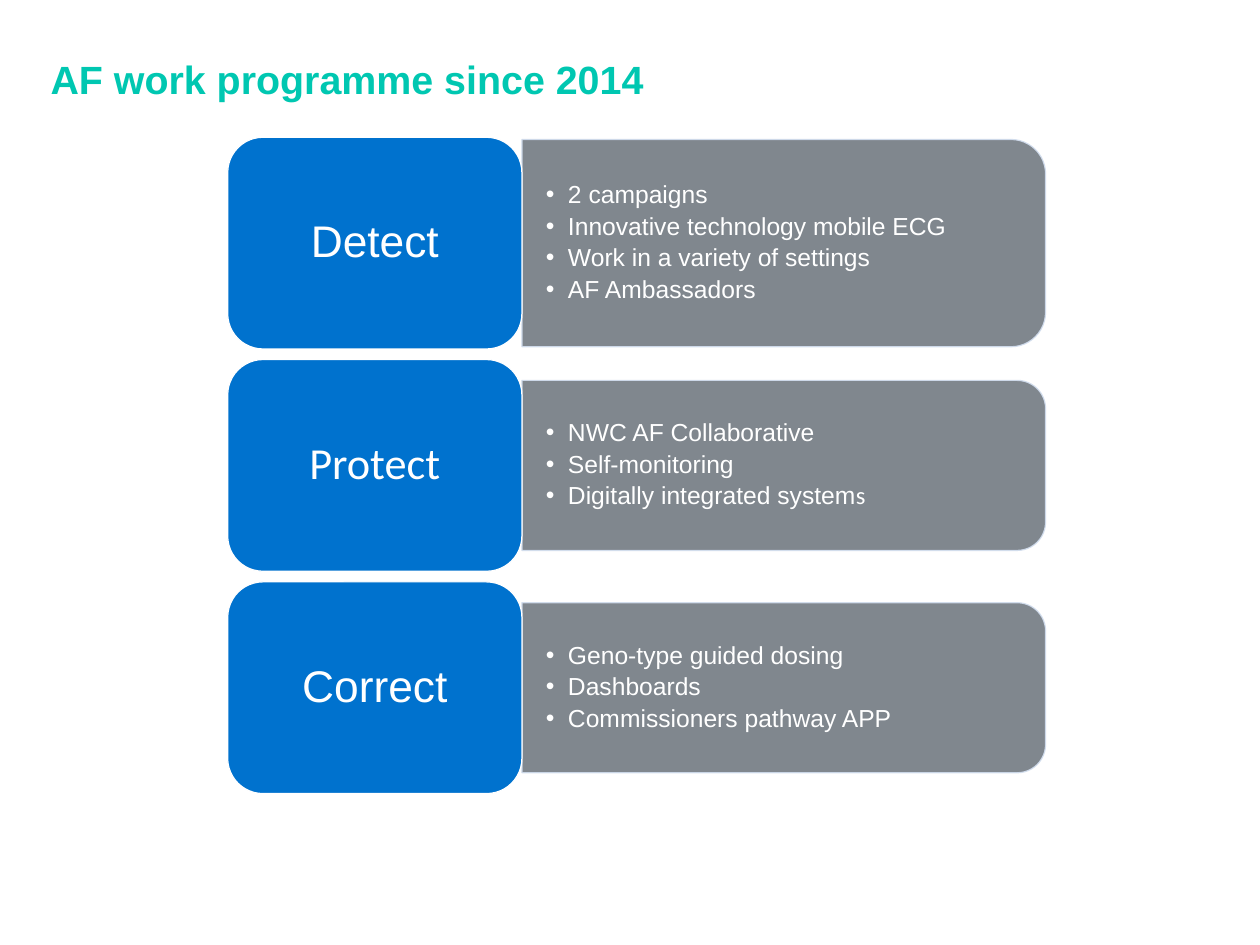
from lxml.etree import SubElement
from pptx import Presentation
from pptx.dml.color import RGBColor
from pptx.enum.shapes import MSO_SHAPE
from pptx.enum.text import MSO_ANCHOR, MSO_AUTO_SIZE, PP_ALIGN
from pptx.oxml.ns import qn
from pptx.util import Inches, Pt

TEAL, BLUE, GREY, PALE, WHITE = "00C7B1", "0072CE", "737B82", "D2DEEF", "FFFFFF"
LABEL_LEFT, LABEL_WIDTH, LABEL_HEIGHT = 2.57, 3.32, 2.39
FIRST_TOP, ROW_PITCH = 1.55, 2.51
PANEL_LEFT, PANEL_WIDTH = LABEL_LEFT + LABEL_WIDTH, 5.91

# Label, label font, panel height, bullets made of (text, font) spans
STAGES = [
    ("Detect", "Arial", 2.34, [
        [("2 campaigns", "Arial")],
        [("Innovative technology mobile ECG", "Arial")],
        [("Work in a variety of settings", "Arial")],
        [("AF Ambassadors", "Arial")],
    ]),
    ("Protect", "Calibri", 1.92, [
        [("NWC AF Collaborative", "Arial")],
        [("Self-monitoring", "Arial")],
        [("Digitally integrated system", "Arial"), ("s", "Calibri")],
    ]),
    ("Correct", "Arial", 1.92, [
        [("Geno-type guided dosing", "Arial")],
        [("Dashboards", "Arial")],
        [("Commissioners pathway APP", "Arial")],
    ]),
]


def colour(value):
    return RGBColor.from_string(value)


def style_font(font, size, value, name=None):
    font.size = Pt(size)
    font.color.rgb = colour(value)
    if name:
        font.name = name


def set_frame(frame, side, edge):
    frame.word_wrap = True
    frame.auto_size = MSO_AUTO_SIZE.NONE
    frame.vertical_anchor = MSO_ANCHOR.MIDDLE
    frame.margin_left = frame.margin_right = Inches(side)
    frame.margin_top = frame.margin_bottom = Inches(edge)


def add_block(page, kind, left, top, width, height, fill, line):
    block = page.shapes.add_shape(kind, Inches(left), Inches(top), Inches(width), Inches(height))
    block.shadow.inherit = False
    block.fill.solid()
    block.fill.fore_color.rgb = colour(fill)
    block.line.color.rgb = colour(line)
    block.line.width = Pt(1)
    return block


def add_title(page, text):
    title = page.shapes.title
    title.left, title.top = Inches(0.43), Inches(0.3)
    title.width, title.height = Inches(13.08), Inches(1.25)
    set_frame(title.text_frame, 0.14, 0.07)
    para = title.text_frame.paragraphs[0]
    para.text = text
    para.alignment = PP_ALIGN.LEFT
    para.line_spacing = 0.9
    style_font(para.font, 32, TEAL, "Arial")
    para.font.bold = True


def add_panel(page, centre, height):
    """Add a panel turned a quarter so that its rounded corners face right."""
    panel = add_block(page, MSO_SHAPE.ROUND_2_SAME_RECTANGLE,
                      PANEL_LEFT + (PANEL_WIDTH - height) / 2, centre - PANEL_WIDTH / 2,
                      height, PANEL_WIDTH, GREY, PALE)
    panel.rotation = 90
    for shade in panel.element.spPr.iter(qn("a:srgbClr")):
        SubElement(shade, qn("a:alpha"), val="90000")


def add_bullets(page, centre, height, bullets):
    box = page.shapes.add_textbox(Inches(PANEL_LEFT), Inches(centre - height / 2),
                                  Inches(PANEL_WIDTH), Inches(height))
    frame = box.text_frame
    set_frame(frame, 0.27, 0.14)
    for index, spans in enumerate(bullets):
        para = frame.paragraphs[0] if index == 0 else frame.add_paragraph()
        properties = para._p.get_or_add_pPr()
        properties.set("marL", str(Inches(0.25)))
        properties.set("indent", str(Inches(-0.25)))
        SubElement(properties, qn("a:buFont"), typeface="Arial")
        SubElement(properties, qn("a:buChar"), char="•")
        para.line_spacing = 0.9
        para.space_after = Pt(4)
        style_font(para.font, 20, WHITE)
        for text, name in spans:
            span = para.add_run()
            span.text = text
            style_font(span.font, 20, WHITE, name)


def add_label(page, top, text, name):
    label = add_block(page, MSO_SHAPE.ROUNDED_RECTANGLE, LABEL_LEFT, top,
                      LABEL_WIDTH, LABEL_HEIGHT, BLUE, WHITE)
    set_frame(label.text_frame, 0.15, 0.07)
    para = label.text_frame.paragraphs[0]
    para.text = text
    para.alignment = PP_ALIGN.CENTER
    para.line_spacing = 0.9
    style_font(para.font, 36, WHITE, name)


def main():
    deck = Presentation()
    deck.slide_width, deck.slide_height = Inches(14.22), Inches(10.67)
    page = deck.slides.add_slide(deck.slide_layouts[5])
    add_title(page, "AF work programme since 2014")
    for row, (text, name, height, bullets) in enumerate(STAGES):
        top = FIRST_TOP + row * ROW_PITCH
        centre = top + LABEL_HEIGHT / 2
        add_panel(page, centre, height)
        add_bullets(page, centre, height, bullets)
        add_label(page, top, text, name)
    deck.save("out.pptx")


if __name__ == "__main__":
    main()
